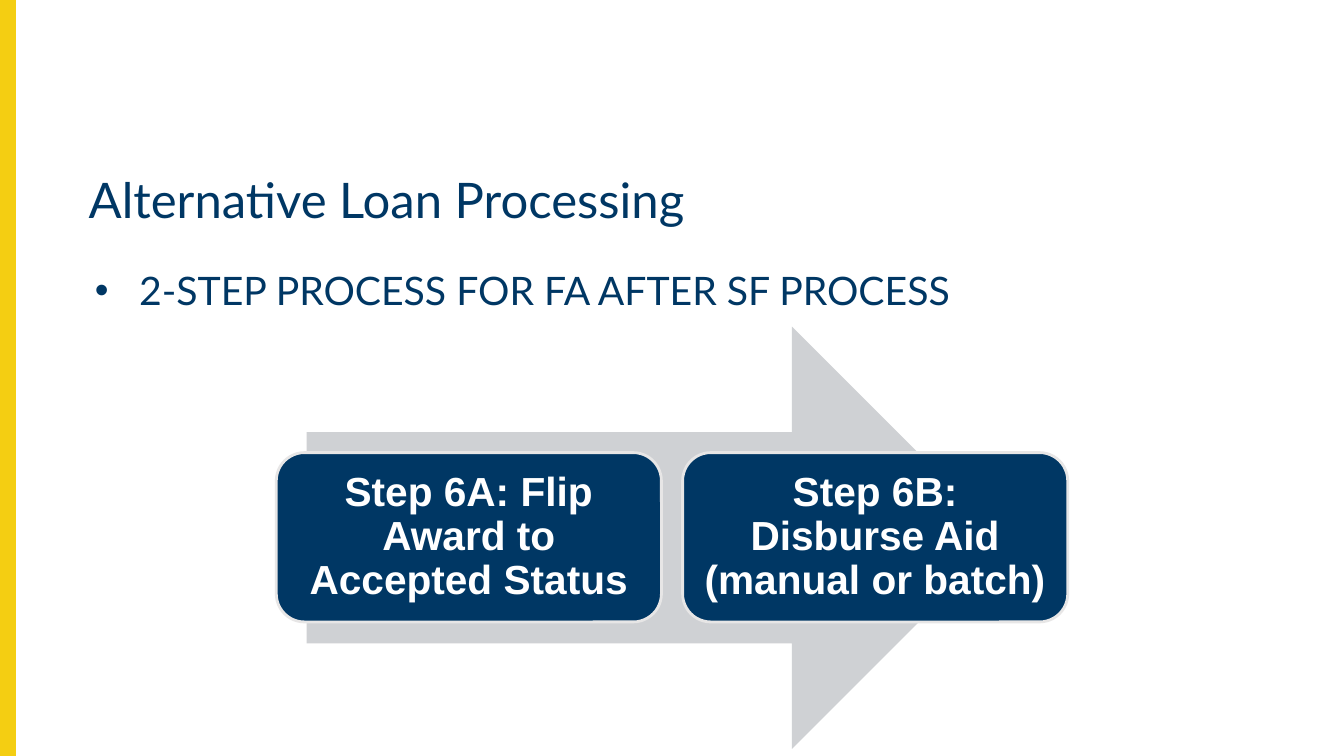
from lxml import etree
from pptx import Presentation
from pptx.dml.color import RGBColor
from pptx.enum import shapes, text
from pptx.oxml import ns
from pptx.util import Inches, Pt

NAVY = RGBColor(0x00, 0x37, 0x64)
GOLD = RGBColor(0xF4, 0xCE, 0x12)
ARROW_GREY = RGBColor(0xCF, 0xD1, 0xD4)
EDGE_GREY = RGBColor(0xE7, 0xE6, 0xE6)
WHITE = RGBColor(0xFF, 0xFF, 0xFF)


def write(frame, wording, size, font="Lato", color=NAVY, bold=False,
          align=text.PP_ALIGN.LEFT, anchor=text.MSO_ANCHOR.TOP,
          inset=(0.1, 0.05), bullet=None):
    frame.word_wrap = True
    frame.auto_size = text.MSO_AUTO_SIZE.NONE
    frame.vertical_anchor = anchor
    frame.margin_left = frame.margin_right = Inches(inset[0])
    frame.margin_top = frame.margin_bottom = Inches(inset[1])
    paragraph = frame.paragraphs[0]
    if bullet:
        properties = paragraph._p.get_or_add_pPr()
        properties.set("marL", str(Inches(0.5)))
        properties.set("indent", str(Inches(-0.44)))
        bullet_color = etree.SubElement(properties, ns.qn("a:buClr"))
        etree.SubElement(bullet_color, ns.qn("a:srgbClr"), val=str(color))
        etree.SubElement(properties, ns.qn("a:buFont"), typeface="Arial")
        etree.SubElement(properties, ns.qn("a:buChar"), char=bullet)
    paragraph.alignment = align
    paragraph.line_spacing = 0.9
    paragraph.space_before = Pt(0)
    run = paragraph.add_run()
    run.text = wording
    run.font.size = Pt(size)
    run.font.name = font
    run.font.bold = bold
    run.font.color.rgb = color


def draw(kind, left, top, width, height, fill, edge=None, edge_width=1):
    shape = slide.shapes.add_shape(
        kind, Inches(left), Inches(top), Inches(width), Inches(height))
    shape.shadow.inherit = False
    shape.fill.solid()
    shape.fill.fore_color.rgb = fill
    if edge is None:
        shape.line.fill.background()
    else:
        shape.line.color.rgb = edge
        shape.line.width = Pt(edge_width)
    return shape


deck = Presentation()
deck.slide_width = Inches(13.33)
deck.slide_height = Inches(7.5)
slide = deck.slides.add_slide(deck.slide_layouts[1])

draw(shapes.MSO_SHAPE.RECTANGLE, 0, 0, 0.15, 7.5, GOLD, GOLD)

heading = slide.shapes.title
heading.left, heading.top = Inches(0.78), Inches(1.7)
heading.width, heading.height = Inches(12.16), Inches(0.87)
write(heading.text_frame, "Alternative Loan Processing", 35)

summary = slide.placeholders[1]
summary.left, summary.top = Inches(0.78), Inches(2.64)
summary.width, summary.height = Inches(12.16), Inches(4.11)
write(summary.text_frame, "2-STEP PROCESS FOR FA AFTER SF PROCESS", 28, bullet="•")

draw(shapes.MSO_SHAPE.RIGHT_ARROW, 3.04, 3.24, 6.91, 4.19, ARROW_GREY)

steps = ["Step 6A: Flip Award to Accepted Status",
         "Step 6B: Disburse Aid (manual or batch)"]
for position, wording in enumerate(steps):
    step = draw(shapes.MSO_SHAPE.ROUNDED_RECTANGLE, 2.74 + position * 4.03, 4.49,
                3.82, 1.68, NAVY, EDGE_GREY, 2)
    write(step.text_frame, wording, 29, font="Arial", color=WHITE, bold=True,
          align=text.PP_ALIGN.CENTER, anchor=text.MSO_ANCHOR.MIDDLE,
          inset=(0.12, 0.12))

deck.save("out.pptx")
